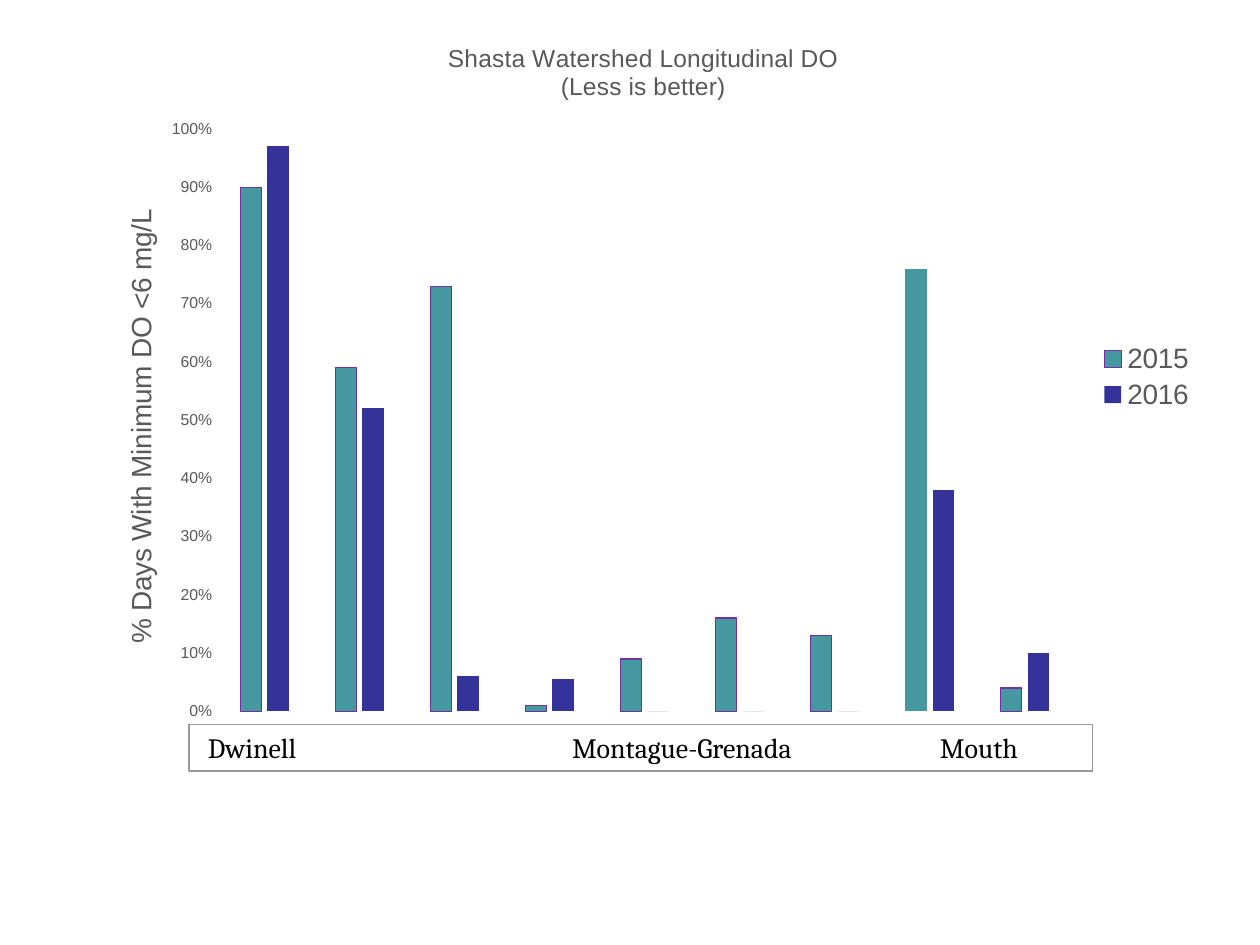
from lxml import etree
from pptx import Presentation
from pptx.chart.data import CategoryChartData
from pptx.dml.color import RGBColor
from pptx.enum.chart import XL_CHART_TYPE, XL_LEGEND_POSITION, XL_TICK_MARK
from pptx.enum.shapes import MSO_SHAPE
from pptx.enum.text import MSO_ANCHOR, MSO_AUTO_SIZE, PP_ALIGN
from pptx.oxml.ns import qn
from pptx.util import Inches, Pt

COLUMNS = XL_CHART_TYPE.COLUMN_CLUSTERED
LEGEND_RIGHT = XL_LEGEND_POSITION.RIGHT
NO_TICKS = XL_TICK_MARK.NONE
RECTANGLE = MSO_SHAPE.RECTANGLE
MIDDLE = MSO_ANCHOR.MIDDLE
GROW = MSO_AUTO_SIZE.SHAPE_TO_FIT_TEXT
LEFT = PP_ALIGN.LEFT

WHITE = RGBColor(0xFF, 0xFF, 0xFF)
BLACK = RGBColor(0x00, 0x00, 0x00)
GRAY = RGBColor(0x59, 0x59, 0x59)
BORDER = RGBColor(0x99, 0x99, 0x99)
TEAL = RGBColor(0x45, 0x97, 0xA0)
PURPLE = RGBColor(0x70, 0x30, 0xA0)
INDIGO = RGBColor(0x33, 0x33, 0x99)

SLIDE_W, SLIDE_H = Inches(10), Inches(7.5)
OXYGEN_2015 = (0.9, 0.59, 0.73, 0.01, 0.09, 0.16, 0.13, 0.76, 0.04)
OXYGEN_2016 = (0.97, 0.52, 0.06, 0.055, 0, 0, 0, 0.38, 0.1)
MOUTH_SITE = 7
REACHES = (("Dwinell", 0), ("Montague-Grenada", 2.89), ("Mouth", 5.81))


def style_font(font, size, color=GRAY, name="Arial", bold=False):
    font.size, font.name, font.bold = Pt(size), name, bold
    font.color.rgb = color


def place(element, index, **shares):
    layout = element.find(qn("c:layout"))
    if layout is None:
        layout = etree.Element(qn("c:layout"))
        element.insert(index, layout)
    manual = etree.SubElement(layout, qn("c:manualLayout"))
    if "w" in shares:
        etree.SubElement(manual, qn("c:layoutTarget"), val="inner")
    for axis in "xy":
        etree.SubElement(manual, qn(f"c:{axis}Mode"), val="edge")
    for key, share in shares.items():
        etree.SubElement(manual, qn(f"c:{key}"), val=str(share))


def write_title(title, lines, size, x, y):
    frame = title.text_frame
    for number, line in enumerate(lines):
        paragraph = frame.add_paragraph() if number else frame.paragraphs[0]
        run = paragraph.add_run()
        run.text = line
        style_font(run.font, size)
    place(title.element, 1, x=x, y=y)


def style_percent_axis(axis):
    axis.minimum_scale, axis.maximum_scale, axis.major_unit = 0, 1, 0.1
    axis.has_major_gridlines = False
    axis.major_tick_mark = axis.minor_tick_mark = NO_TICKS
    axis.format.line.fill.background()
    axis.tick_labels.number_format = "0%"
    axis.tick_labels.number_format_is_linked = False
    style_font(axis.tick_labels.font, 9)
    write_title(axis.axis_title, ["% Days With Minimum DO <6 mg/L"], 16, 0.03, 0.26)


def style_series(plot):
    plot.gap_width, plot.overlap, plot.vary_by_categories = 219, -27, False
    first_year, second_year = plot.series
    for year, color in ((first_year, TEAL), (second_year, INDIGO)):
        year.invert_if_negative = False
        year.format.fill.solid()
        year.format.fill.fore_color.rgb = color
    first_year.format.line.color.rgb = PURPLE
    first_year.format.line.width = Pt(0.75)
    second_year.format.line.fill.background()
    mouth = first_year.points[MOUTH_SITE].format
    mouth.fill.solid()
    mouth.fill.fore_color.rgb = TEAL
    mouth.line.fill.background()


def add_oxygen_chart(slide):
    data = CategoryChartData(number_format="0%")
    data.categories = [str(site) for site in range(1, len(OXYGEN_2015) + 1)]
    data.add_series("2015", OXYGEN_2015)
    data.add_series("2016", OXYGEN_2016)
    chart = slide.shapes.add_chart(
        COLUMNS, Inches(0.67), Inches(0.14), Inches(8.92), Inches(5.7), data
    ).chart
    style_font(chart.font, 10, BLACK)
    write_title(
        chart.chart_title,
        ["Shasta Watershed Longitudinal DO", "(Less is better)"],
        14, 0.32, 0.03,
    )
    chart.category_axis.visible = False
    style_percent_axis(chart.value_axis)
    style_series(chart.plots[0])
    chart.has_legend = True
    chart.legend.position = LEGEND_RIGHT
    chart.legend.include_in_layout = False
    style_font(chart.legend.font, 16)
    plot_area = chart.element.find(".//" + qn("c:plotArea"))
    place(plot_area, 0, x=0.118, y=0.155, w=0.761, h=0.811)


def add_reach_band(slide):
    band = slide.shapes.add_shape(
        RECTANGLE, Inches(1.5), Inches(5.75), Inches(7.17), Inches(0.37)
    )
    band.shadow.inherit = False
    band.fill.solid()
    band.fill.fore_color.rgb = WHITE
    band.line.color.rgb = BORDER
    band.line.width = Pt(0.75)
    frame = band.text_frame
    frame.word_wrap, frame.auto_size = True, GROW
    frame.vertical_anchor = MIDDLE
    frame.margin_left = Inches(0.15)
    paragraph = frame.paragraphs[0]
    stops = etree.SubElement(paragraph._p.get_or_add_pPr(), qn("a:tabLst"))
    for _, stop in REACHES[1:]:
        etree.SubElement(stops, qn("a:tab"), pos=str(Inches(stop)), algn="l")
    paragraph.alignment = LEFT
    run = paragraph.add_run()
    run.text = "\t".join(reach for reach, _ in REACHES)
    style_font(run.font, 16, BLACK, "Cambria")


def main():
    deck = Presentation()
    deck.slide_width, deck.slide_height = SLIDE_W, SLIDE_H
    slide = deck.slides.add_slide(deck.slide_layouts[6])
    add_oxygen_chart(slide)
    add_reach_band(slide)
    deck.save("out.pptx")


if __name__ == "__main__":
    main()
